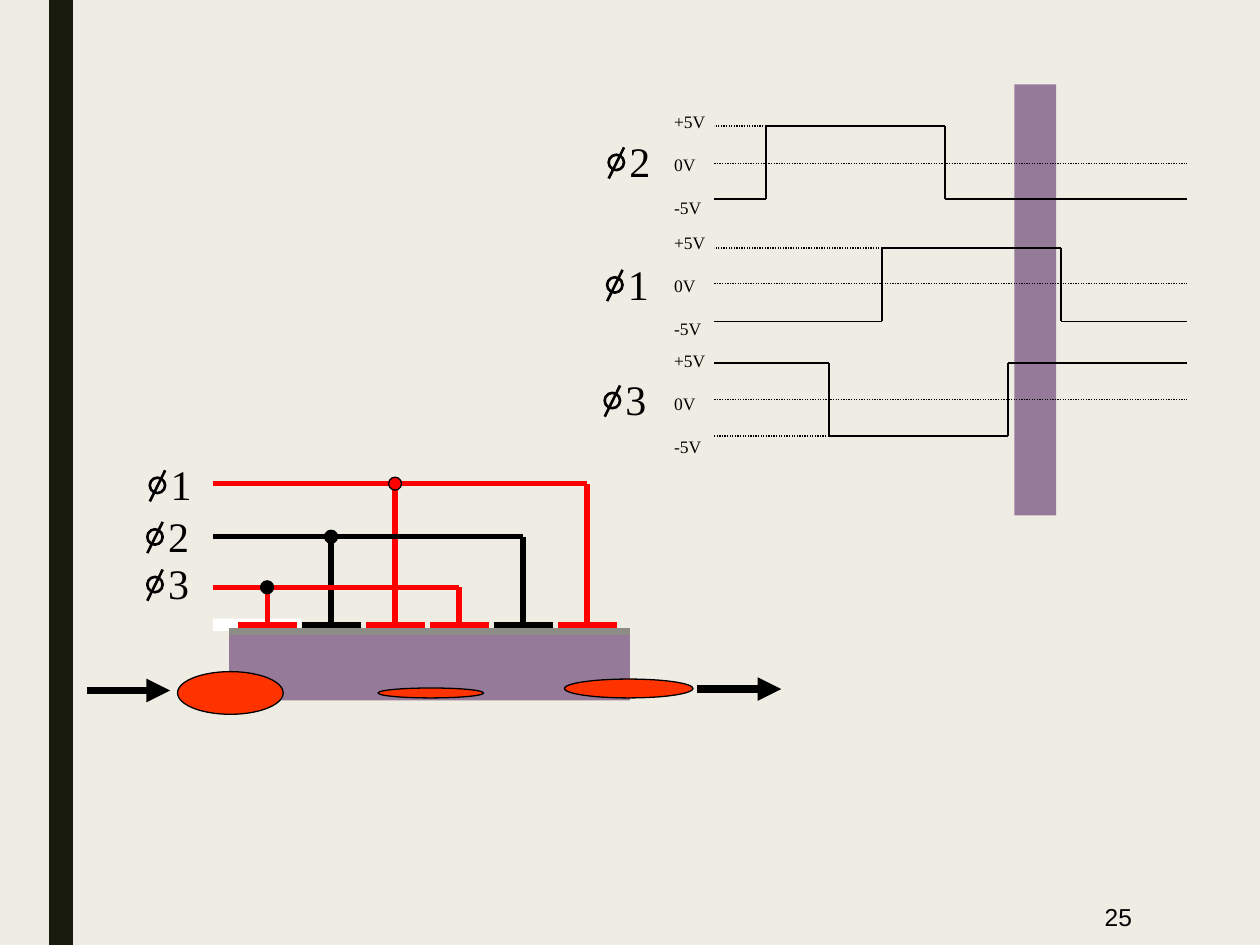
import pptx
import pptx.util
from pptx.dml.color import RGBColor
from pptx.enum.dml import MSO_LINE
from pptx.enum.shapes import MSO_CONNECTOR, MSO_SHAPE
from pptx.enum.text import MSO_ANCHOR, MSO_AUTO_SIZE, PP_ALIGN
from pptx.oxml.xmlchemy import OxmlElement
from pptx.util import Cm, Pt

BACKGROUND = RGBColor(0xEF, 0xED, 0xE3)
SIDEBAR = RGBColor(0x19, 0x1B, 0x0E)
PURPLE = RGBColor(0x95, 0x7A, 0x99)
OXIDE = RGBColor(0x8C, 0x8D, 0x86)
CHARGE = RGBColor(0xFF, 0x33, 0x00)
RED = RGBColor(0xFF, 0x00, 0x00)
BLACK = RGBColor(0x00, 0x00, 0x00)
WHITE = RGBColor(0xFF, 0xFF, 0xFF)

# Phase: (bus height, colour, left and top of its symbol)
BUSES = {
    "1": (9.75, RED, 3.02, 9.63),
    "2": (10.82, BLACK, 2.97, 10.67),
    "3": (11.84, RED, 2.97, 11.63),
}
ELECTRODE_PHASES = "321321"
ELECTRODE_LEFT, ELECTRODE_TOP = 4.79, 12.62
ELECTRODE_PITCH, ELECTRODE_WIDTH = 1.29, 1.19
BUS_LEFT = 4.29
DOT_SIZE = 0.26
DOT_COLOURS = {"1": RED, "2": BLACK, "3": BLACK}

# Phase, symbol left and top, voltage label top, rest, zero and pulse heights, pulse start
WAVES = [
    ("3", 12.19, 7.92, 6.93, 7.32, 8.05, 8.79, 16.71),
    ("1", 12.24, 5.59, 4.55, 6.48, 5.72, 5.0, 17.78),
    ("2", 12.27, 3.12, 2.11, 4.01, 3.3, 2.54, 15.44),
]
WAVE_LEFT, WAVE_RIGHT, PULSE_WIDTH = 14.4, 23.93, 3.61
VOLTAGE_LEFT = 13.34


def add_shape(slide, kind, box, fill=None, line_width=None):
    shape = slide.shapes.add_shape(kind, *map(Cm, box))
    shape.shadow.inherit = False
    if fill is None:
        shape.fill.background()
    else:
        shape.fill.solid()
        shape.fill.fore_color.rgb = fill
    if line_width is None:
        shape.line.fill.background()
    else:
        shape.line.color.rgb = BLACK
        shape.line.width = Pt(line_width)
    return shape


def add_line(slide, start, end, width=0.75, colour=BLACK, dotted=False):
    line = slide.shapes.add_connector(
        MSO_CONNECTOR.STRAIGHT, *map(Cm, (*start, *end)))
    line.line.color.rgb = colour
    line.line.width = Pt(width)
    if dotted:
        line.line.dash_style = MSO_LINE.ROUND_DOT
    line._element.spPr.append(OxmlElement("a:effectLst"))
    return line


def add_arrow(slide, start, end):
    arrow = add_line(slide, start, end, 4.5)
    head = OxmlElement("a:tailEnd")
    head.set("type", "triangle")
    arrow.line._get_or_add_ln().append(head)


def add_text(slide, box, text, size, font="Times New Roman", gap=0):
    """Add one paragraph per line of text, with gap points between them."""
    text_box = slide.shapes.add_textbox(*map(Cm, box))
    frame = text_box.text_frame
    frame.word_wrap = False
    frame.auto_size = MSO_AUTO_SIZE.SHAPE_TO_FIT_TEXT
    frame.text = text
    for index, paragraph in enumerate(frame.paragraphs):
        if index and gap:
            paragraph.space_before = Pt(gap)
        for run in paragraph.runs:
            run.font.size = Pt(size)
            run.font.name = font
            run.font.color.rgb = BLACK
    return frame


def add_phase_symbol(slide, left, top, digit):
    """Draw a slashed circle followed by the phase number."""
    add_shape(slide, MSO_SHAPE.OVAL, (left, top, 0.31, 0.31), line_width=1.5)
    add_line(slide, (left + 0.31, top - 0.15), (left, top + 0.48), 1.5)
    add_text(slide, (left + 0.17, top - 0.51, 0.94, 1.27), digit, 24)


def add_electrode(slide, index):
    phase = ELECTRODE_PHASES[index]
    bus_top, colour = BUSES[phase][:2]
    left = ELECTRODE_LEFT + index * ELECTRODE_PITCH
    centre = left + ELECTRODE_WIDTH / 2
    add_line(slide, (left, ELECTRODE_TOP),
             (left + ELECTRODE_WIDTH, ELECTRODE_TOP), 4.5, colour)
    add_line(slide, (centre, ELECTRODE_TOP), (centre, bus_top), 3, colour)
    return phase, centre


def add_device(slide):
    add_shape(slide, MSO_SHAPE.RECTANGLE, (4.62, 12.8, 8.08, 1.32), PURPLE)
    add_shape(slide, MSO_SHAPE.RECTANGLE, (4.29, 12.47, 1.78, 0.25), WHITE)
    electrodes = [add_electrode(slide, index)
                  for index in range(len(ELECTRODE_PHASES))]
    add_line(slide, (4.62, 12.73), (12.7, 12.73), 4.5, OXIDE)

    for phase, centre in electrodes[3:][::-1]:
        bus_top, colour, left, top = BUSES[phase]
        add_line(slide, (centre, bus_top), (BUS_LEFT, bus_top), 3, colour)
        add_phase_symbol(slide, left, top, phase)
    for phase, centre in electrodes[:3]:
        corner = (centre - DOT_SIZE / 2, BUSES[phase][0] - DOT_SIZE / 2)
        add_shape(slide, MSO_SHAPE.OVAL, (*corner, DOT_SIZE, DOT_SIZE),
                  DOT_COLOURS[phase], 0.75)

    for box in [(7.62, 13.87, 2.13, 0.2), (11.38, 13.69, 2.59, 0.38),
                (3.58, 13.54, 2.13, 0.86)]:
        add_shape(slide, MSO_SHAPE.OVAL, box, CHARGE, 0.75)
    add_arrow(slide, (14.05, 13.89), (15.75, 13.89))
    add_arrow(slide, (1.75, 13.92), (3.43, 13.92))


def add_wave(slide, rest, zero, pulse, start):
    end = start + PULSE_WIDTH
    add_line(slide, (WAVE_LEFT, zero), (WAVE_RIGHT, zero), dotted=True)
    add_line(slide, (start, pulse), (WAVE_LEFT, pulse), dotted=True)
    corners = [(WAVE_LEFT, rest), (start, rest), (start, pulse),
               (end, pulse), (end, rest), (WAVE_RIGHT, rest)]
    for first, second in zip(corners, corners[1:]):
        add_line(slide, first, second)


def add_timing_diagram(slide):
    add_shape(slide, MSO_SHAPE.RECTANGLE, (20.45, 1.7, 0.84, 8.69), PURPLE)
    for phase, left, top, label_top, rest, zero, pulse, start in WAVES:
        add_wave(slide, rest, zero, pulse, start)
        add_text(slide, (VOLTAGE_LEFT, label_top, 1.14, 2.36),
                 "+5V\n0V\n-5V", 10, gap=12.5)
        add_phase_symbol(slide, left, top, phase)


def add_slide_number(slide):
    frame = add_text(slide, (19.74, 17.93, 3.33, 1.12), "25", 14, "Arial")
    frame.auto_size = MSO_AUTO_SIZE.NONE
    frame.word_wrap = True
    frame.vertical_anchor = MSO_ANCHOR.MIDDLE
    frame.paragraphs[0].alignment = PP_ALIGN.RIGHT


def main():
    presentation = pptx.Presentation()
    presentation.slide_width = Cm(25.4)
    presentation.slide_height = Cm(19.05)
    slide = presentation.slides.add_slide(presentation.slide_layouts[6])
    slide.background.fill.solid()
    slide.background.fill.fore_color.rgb = BACKGROUND
    add_shape(slide, MSO_SHAPE.RECTANGLE, (0.99, 0, 0.48, 19.05), SIDEBAR)
    add_slide_number(slide)
    add_timing_diagram(slide)
    add_device(slide)
    presentation.save("out.pptx")


if __name__ == "__main__":
    main()
